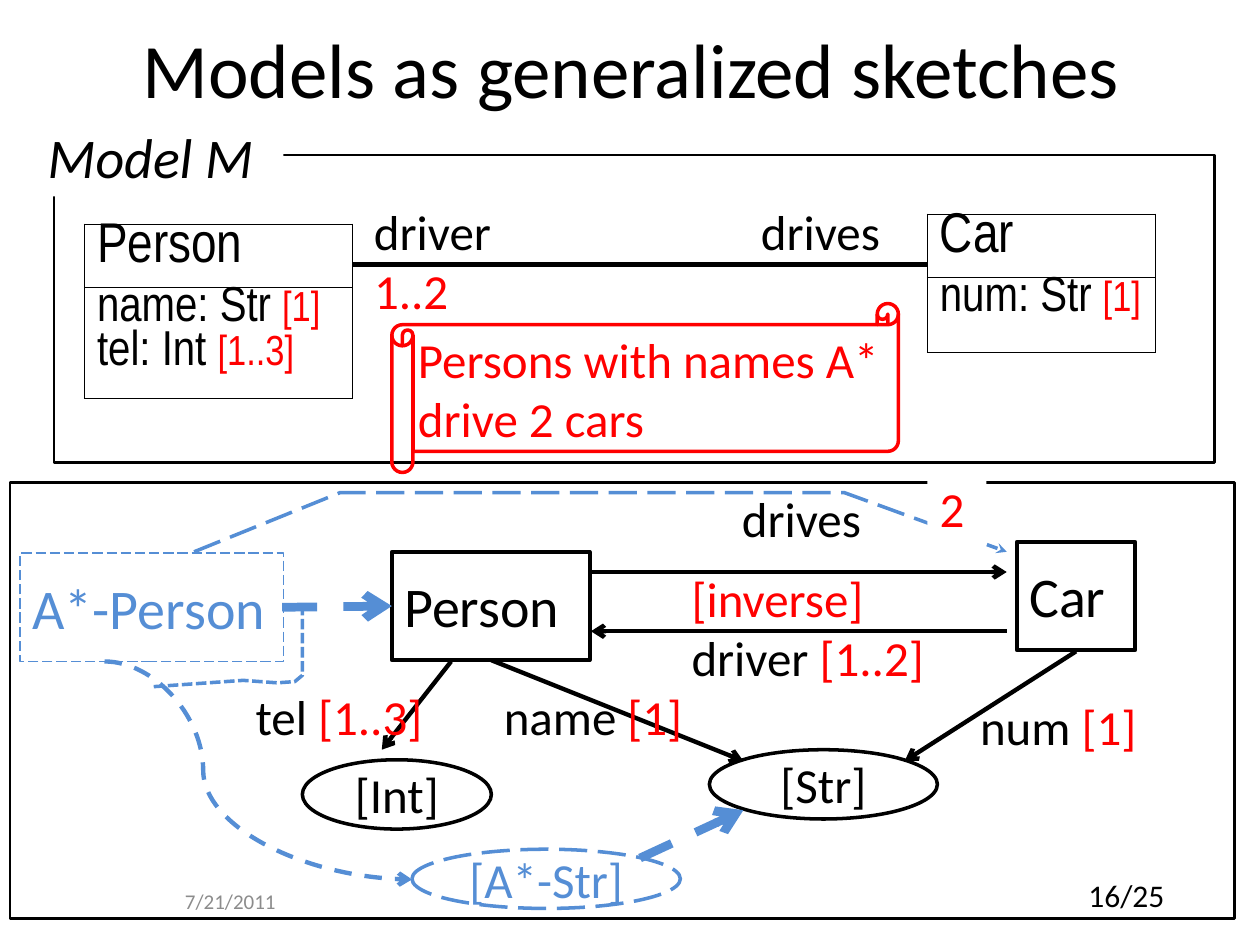
from dataclasses import dataclass

from lxml import etree
from pptx import Presentation
from pptx.dml.color import RGBColor
from pptx.enum.dml import MSO_LINE
from pptx.enum.shapes import MSO_CONNECTOR, MSO_SHAPE
from pptx.enum.text import MSO_ANCHOR, PP_ALIGN
from pptx.oxml.ns import qn
from pptx.util import Inches, Pt

BLACK, RED, BLUE, WHITE, GRAY = "000000", "FF0000", "558ED5", "FFFFFF", "8C8C8C"
RECT, OVAL, SCROLL = MSO_SHAPE.RECTANGLE, MSO_SHAPE.OVAL, MSO_SHAPE.HORIZONTAL_SCROLL
STRAIGHT, CURVE = MSO_CONNECTOR.STRAIGHT, MSO_CONNECTOR.CURVE
DASH, LONG_DASH, SHORT_DASH = MSO_LINE.DASH, MSO_LINE.LONG_DASH, MSO_LINE.SQUARE_DOT
TOP, MIDDLE = MSO_ANCHOR.TOP, MSO_ANCHOR.MIDDLE
LEFT, CENTER = PP_ALIGN.LEFT, PP_ALIGN.CENTER


@dataclass
class Span:
    text: str
    color: str = BLACK
    size: float = 28


@dataclass
class Label:
    area: tuple
    spans: list
    fill: str | None = None
    italic: bool = False


@dataclass
class Node:
    kind: int
    area: tuple
    text: str
    color: str = BLACK
    size: float = 28
    width: float = 2
    dash: int | None = None
    insets: tuple = (0.1, 0.05)
    anchor: int = MIDDLE
    align: int = CENTER


@dataclass
class Link:
    start: tuple
    end: tuple
    color: str = BLACK
    width: float = 2.5
    dash: int | None = None
    head: str | None = "arrow"
    kind: int = STRAIGHT


@dataclass
class ClassTable:
    area: tuple
    rows: tuple
    name: str
    attributes: list


def rgb(color: str) -> RGBColor:
    return RGBColor.from_string(color)


def style_line(line, color: str, width: float, dash=None, head: str | None = None) -> None:
    line.color.rgb = rgb(color)
    line.width = Pt(width)
    if dash is not None:
        line.dash_style = dash
    if head:
        etree.SubElement(line._get_or_add_ln(), qn("a:tailEnd"), type=head)


def add_spans(para, spans: list, font: str = "Calibri", italic: bool = False, align=LEFT) -> None:
    para.alignment = align
    for span in spans:
        run = para.add_run()
        run.text = span.text
        run.font.name, run.font.size, run.font.italic = font, Pt(span.size), italic
        run.font.color.rgb = rgb(span.color)


def write(frame, spans: list, *, insets=(0.1, 0.05), anchor=TOP, wrap=True, **style) -> None:
    frame.word_wrap, frame.vertical_anchor = wrap, anchor
    frame.margin_left = frame.margin_right = Inches(insets[0])
    frame.margin_top = frame.margin_bottom = Inches(insets[1])
    add_spans(frame.paragraphs[0], spans, **style)


def add_label(page, label: Label, **style) -> None:
    box = page.shapes.add_textbox(*map(Inches, label.area))
    if label.fill:
        box.fill.solid()
        box.fill.fore_color.rgb = rgb(label.fill)
    write(box.text_frame, label.spans, italic=label.italic, **style)


def add_node(page, node: Node) -> None:
    shape = page.shapes.add_shape(node.kind, *map(Inches, node.area))
    shape.shadow.inherit = False
    shape.fill.background()
    style_line(shape.line, node.color, node.width, node.dash)
    if node.text:
        write(shape.text_frame, [Span(node.text, node.color, node.size)],
              insets=node.insets, anchor=node.anchor, align=node.align)


def add_link(page, link: Link) -> None:
    line = page.shapes.add_connector(link.kind, *map(Inches, link.start + link.end))
    style_line(line.line, link.color, link.width, link.dash, link.head)
    properties = line._element.spPr
    etree.SubElement(properties, qn("a:effectLst"))
    if link.kind == CURVE:
        guides = properties.find(qn("a:prstGeom")).get_or_add_avLst()
        etree.SubElement(guides, qn("a:gd"), name="adj1", fmla="val 32100")


def add_path(page, points: list, dash, head: str | None = None) -> None:
    corners = [(Inches(x), Inches(y)) for x, y in points]
    builder = page.shapes.build_freeform(*corners[0])
    builder.add_line_segments(corners[1:], close=False)
    shape = builder.convert_to_shape()
    shape.shadow.inherit = False
    shape.fill.background()
    style_line(shape.line, BLUE, 2, dash, head)


def add_border(cell, side: str, width: float) -> None:
    line = etree.SubElement(cell._tc.get_or_add_tcPr(), qn(f"a:ln{side}"), w=str(Pt(width)))
    fill = etree.SubElement(line, qn("a:solidFill"))
    etree.SubElement(fill, qn("a:srgbClr"), val=BLACK)


def add_class(page, item: ClassTable) -> None:
    table = page.shapes.add_table(2, 1, *map(Inches, item.area)).table
    table.first_row = table.horz_banding = False
    contents = [[[Span(item.name, size=32)]], item.attributes]
    for index, lines in enumerate(contents):
        table.rows[index].height = Inches(item.rows[index])
        cell = table.cell(index, 0)
        for side in "LRTB":
            divider = side == "BT"[index]
            add_border(cell, side, 1 if divider else 0.75)
        cell.fill.background()
        for number, spans in enumerate(lines):
            frame = cell.text_frame
            para = frame.add_paragraph() if number else frame.paragraphs[0]
            add_spans(para, spans, font="Arial Narrow")
            para.line_spacing = 0.75
            before = etree.SubElement(para._p.get_or_add_pPr(), qn("a:spcBef"))
            etree.SubElement(before, qn("a:spcPct"), val="20000")


def attribute(name: str, count: str) -> list:
    return [Span(name), Span(count, RED, 24)]


def counted(name: str, count: str) -> list:
    return [Span(name), Span(count, RED)]


SQUARE = dict(size=32, insets=(0.1, 0.16), anchor=TOP, align=LEFT)
BACK_LABELS = [
    Label((2.87, 2.02, 1.02, 0.57), [Span("1..2", RED)], WHITE),
    Label((5.39, 4.46, 1.81, 0.57), [Span("[inverse]", RED)], WHITE),
]
CLASSES = [
    ClassTable((0.67, 1.78, 2.13, 1.19), (0.41, 0.78), "Person",
               [attribute("name: Str ", "[1]"), attribute("tel: Int ", "[1..3]")]),
    ClassTable((7.36, 1.7, 1.81, 1.06), (0.46, 0.6), "Car", [attribute("num: Str ", "[1]")]),
]
NODES = [
    Node(RECT, (0.43, 1.23, 9.21, 2.44), "", width=1.5),
    Node(RECT, (0.08, 3.83, 9.72, 3.46), "", width=1.5),
    Node(SCROLL, (3.11, 2.41, 4.02, 1.34), "Persons with names A* drive 2 cars", RED,
         insets=(0.04, 0.04), align=LEFT),
    Node(RECT, (3.11, 4.38, 1.57, 0.86), "Person", width=2.25, **SQUARE),
    Node(RECT, (8.07, 4.3, 0.94, 0.86), "Car", width=2.25, **SQUARE),
    Node(RECT, (0.16, 4.39, 2.09, 0.86), "A*-Person", BLUE, width=0.75, dash=LONG_DASH, **SQUARE),
    Node(OVAL, (5.63, 5.95, 1.81, 0.55), "[Str]"),
    Node(OVAL, (2.4, 6.03, 1.5, 0.55), "[Int]"),
    Node(OVAL, (3.27, 6.74, 2.13, 0.47), "[A*-Str]", BLUE, dash=LONG_DASH),
]
LINKS = [
    Link((2.8, 2.1), (7.36, 2.1), head=None),
    Link((4.69, 4.54), (7.99, 4.54)),
    Link((7.99, 5.01), (4.69, 5.01)),
    Link((3.9, 5.24), (5.9, 6.04)),
    Link((8.54, 5.17), (7.18, 6.04)),
    Link((3.58, 5.25), (3.03, 5.95)),
    Link((0.83, 5.25), (3.27, 6.98), BLUE, dash=DASH, kind=CURVE),
    Link((2.24, 4.82), (3.11, 4.81), BLUE, 5, DASH),
    Link((5.08, 6.81), (5.9, 6.43), BLUE, 5, DASH),
]
LABELS = [
    Label((2.87, 1.55, 1.5, 0.57), [Span("driver")]),
    Label((5.94, 1.55, 1.42, 0.57), [Span("drives")]),
    Label((5.79, 3.83, 1.26, 0.57), [Span("drives")]),
    Label((5.39, 4.93, 2.13, 0.57), counted("driver ", "[1..2]")),
    Label((3.9, 5.4, 1.81, 0.57), counted("name ", "[1]")),
    Label((7.68, 5.48, 1.5, 0.57), counted("num ", "[1]")),
    Label((1.93, 5.4, 1.65, 0.57), counted("tel ", "[1..3]")),
    Label((0.28, 0.92, 1.97, 0.64), [Span("Model M", size=32)], WHITE, italic=True),
    Label((7.36, 3.75, 0.47, 0.57), [Span("2", RED)], WHITE),
]


def main() -> None:
    deck = Presentation()
    deck.slide_width, deck.slide_height = Inches(10), Inches(7.5)
    page = deck.slides.add_slide(deck.slide_layouts[6])

    # Title, date and page number
    title = Label((0.51, 0, 9, 1.07), [Span("Models as generalized sketches", size=44)])
    add_label(page, title, anchor=MIDDLE, align=CENTER)
    add_label(page, Label((1.37, 6.95, 2.33, 0.4), [Span("7/21/2011", GRAY, 12)]), anchor=MIDDLE)
    add_label(page, Label((8.54, 6.9, 0.85, 0.4), [Span("16/25", size=18)]), wrap=False)

    # Class model and sketch graph; filled labels lie under or over the lines
    for label in BACK_LABELS:
        add_label(page, label)
    for item in CLASSES:
        add_class(page, item)
    for node in NODES:
        add_node(page, node)
    for link in LINKS:
        add_link(page, link)

    # Derived arrow over the top, and the tie between the two dashed arrows
    add_path(page, [(1.54, 4.38), (2.7, 3.91), (6.7, 3.91), (7.99, 4.38)], LONG_DASH, "stealth")
    add_path(page, [(1.22, 5.45), (1.93, 5.4), (2.2, 5.42), (2.34, 5.41), (2.4, 5.36),
                    (2.4, 4.85)], SHORT_DASH)
    for label in LABELS:
        add_label(page, label)

    deck.save("out.pptx")


if __name__ == "__main__":
    main()
